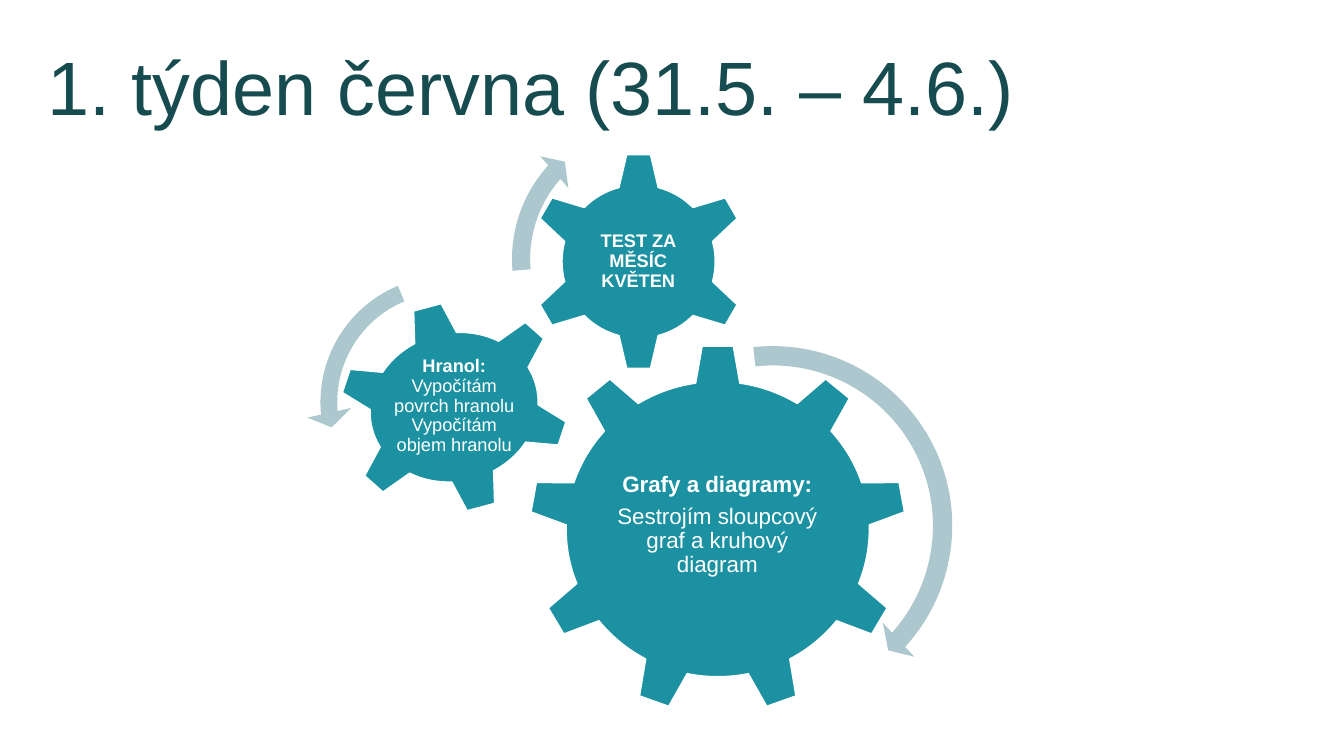
import pptx
import pptx.dml.color
import pptx.enum.shapes
import pptx.enum.text
import pptx.util

SHAPE = pptx.enum.shapes.MSO_SHAPE
ALIGN = pptx.enum.text.PP_ALIGN
ANCHOR = pptx.enum.text.MSO_ANCHOR


def color(hex_code):
    return pptx.dml.color.RGBColor.from_string(hex_code)


class GearSlide:
    """Slide style and builders; every box is (left, top, width, height) in % of the slide."""
    FONT, TITLE, GEAR, ARROW, WHITE = "Arial", "164B4F", "1B91A1", "ACC7CD", "FFFFFF"

    def __init__(self, prs):
        self.size = (prs.slide_width, prs.slide_height)
        self.s = prs.slides.add_slide(prs.slide_layouts[5])
        self.diagram = self.s.shapes.add_group_shape().shapes

    def place(self, box):
        return [round(share * self.size[i % 2] / 100) for i, share in enumerate(box)]

    def format_run(self, r, size, hex_code, bold=False):
        r.font.name, r.font.size, r.font.bold = self.FONT, pptx.util.Pt(size), bold
        r.font.color.rgb = color(hex_code)

    def title(self, text, box):
        sp = self.s.shapes.title
        sp.left, sp.top, sp.width, sp.height = self.place(box)
        tf = sp.text_frame
        tf.text = text
        tf.auto_size = pptx.enum.text.MSO_AUTO_SIZE.NONE
        tf.vertical_anchor = ANCHOR.BOTTOM
        p = tf.paragraphs[0]
        p.alignment, p.line_spacing = ALIGN.LEFT, 0.9
        self.format_run(p.runs[0], 54, self.TITLE)

    def shape(self, kind, box, fill):
        sp = self.diagram.add_shape(kind, *self.place(box))
        sp.shadow.inherit = False
        sp.fill.solid()
        sp.fill.fore_color.rgb = color(fill)
        return sp

    def gear(self, kind, box, rotation=0):
        sp = self.shape(kind, box, self.GEAR)
        sp.rotation = rotation
        sp.line.color.rgb = color(self.WHITE)
        sp.line.width = pptx.util.Pt(1)

    def arrow(self, kind, box, adjustments):
        sp = self.shape(kind, box, self.ARROW)
        sp.line.fill.background()
        for i, value in enumerate(adjustments):
            sp.adjustments[i] = value

    def label(self, text, box, size):
        """Centred text whose first run is the bold heading."""
        tf = self.diagram.add_textbox(*self.place(box)).text_frame
        tf.word_wrap = True
        tf.vertical_anchor = ANCHOR.MIDDLE
        tf.margin_left = tf.margin_right = pptx.util.Inches(0.02)
        tf.margin_top = tf.margin_bottom = pptx.util.Inches(0.02)
        tf.text = text
        for p in tf.paragraphs:
            p.alignment, p.line_spacing = ALIGN.CENTER, 0.9
            p.space_after = pptx.util.Pt(0.35 * size)
        runs = [r for p in tf.paragraphs for r in p.runs]
        for i, r in enumerate(runs):
            self.format_run(r, size, self.WHITE, bold=i == 0)


GEARS = [
    (SHAPE.GEAR_9, (39.38, 45.6, 28.05, 48.8), 0,
     "Grafy a diagramy:\nSestrojím sloupcový graf a kruhový diagram",
     (44.93, 56.93, 16.88, 25.07), 16),
    (SHAPE.GEAR_6, (39.38, 20.13, 16.28, 28.93), 0,
     "TEST ZA MĚSÍC KVĚTEN", (43.43, 27.47, 8.1, 14.27), 13),
    (SHAPE.GEAR_6, (25.13, 39.87, 17.33, 28), 345,
     "Hranol:\vVypočítám povrch hranolu\vVypočítám objem hranolu",
     (29.03, 45.73, 9.53, 16), 13),
]
ARROWS = [
    (SHAPE.CIRCULAR_ARROW, (43.13, 44, 28.73, 51.07), (0.05, 2.99, 25.32, 158.28, 0.06)),
    (SHAPE.LEFT_CIRCULAR_ARROW, (22.8, 34.67, 20.85, 37.07), (0.06, 4.3, 104.89, 148.38, 0.08)),
    (SHAPE.CIRCULAR_ARROW, (37.2, 14.27, 22.5, 40), (0.06, 3.94, 133.14, 105.08, 0.07)),
]


def main():
    prs = pptx.Presentation()
    prs.slide_width, prs.slide_height = pptx.util.Inches(13.33), pptx.util.Inches(7.5)
    slide = GearSlide(prs)
    slide.title("1. týden června (31.5. – 4.6.)", (2.78, 1.73, 78.53, 16.4))
    for kind, box, rotation, text, text_box, size in GEARS:
        slide.gear(kind, box, rotation)
        slide.label(text, text_box, size)
    for kind, box, adjustments in ARROWS:
        slide.arrow(kind, box, adjustments)
    prs.save("out.pptx")


if __name__ == "__main__":
    main()
